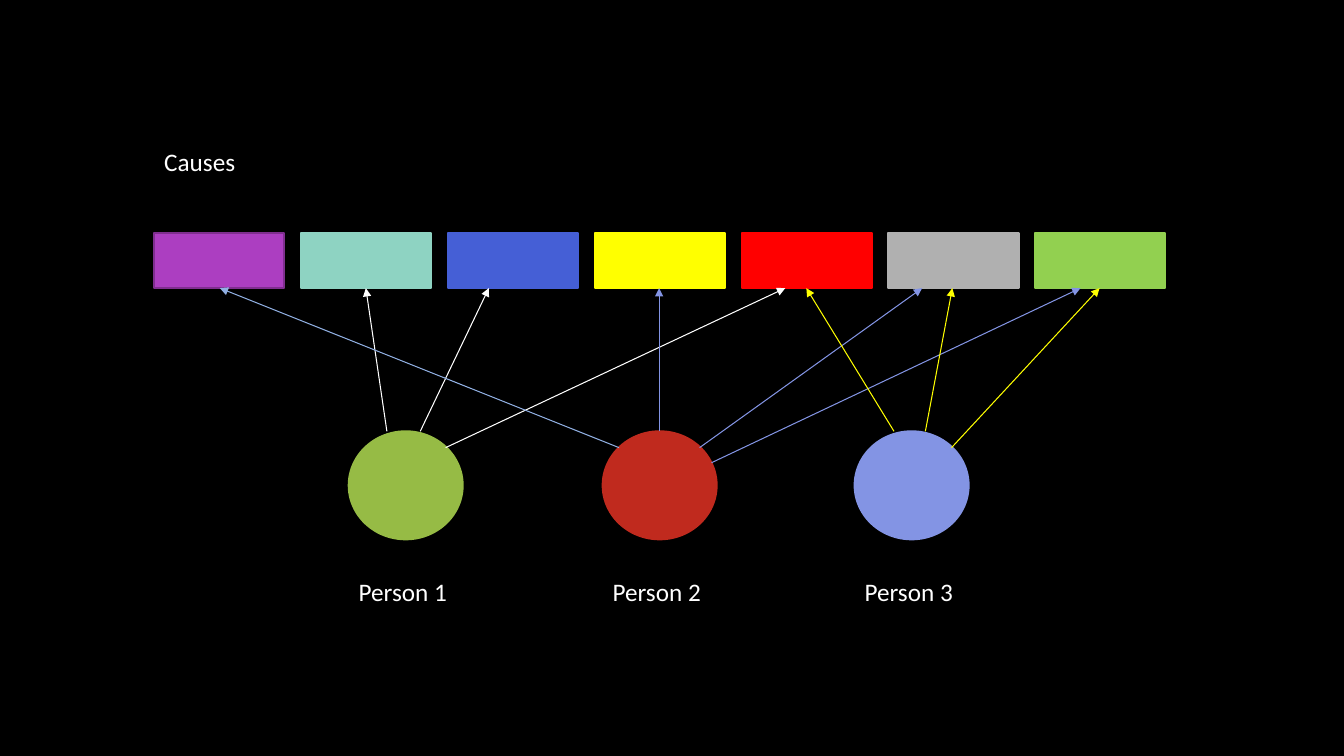
from dataclasses import dataclass

from lxml import etree
from pptx import Presentation
from pptx import util as u
from pptx.dml.color import RGBColor
from pptx.enum import shapes, text
from pptx.oxml.ns import qn
from pptx.shapes.autoshape import Shape
from pptx.slide import Slide

COLORS = {
    "black": "000000",
    "white": "FFFFFF",
    "purple": "AC3EC1",
    "dark purple": "7F2E8F",
    "mint": "8ED3C2",
    "blue": "455FD6",
    "yellow": "FFFF00",
    "red": "FF0000",
    "gray": "B0B0B0",
    "lime": "92D050",
    "olive": "96BB45",
    "brick": "C02A1E",
    "periwinkle": "8394E4",
    "sky": "91B0E3",
}

CAUSE_LEFT, CAUSE_TOP, CAUSE_PITCH = 3.89, 5.87, 3.7
CAUSE_WIDTH, CAUSE_HEIGHT = 3.28, 1.4
CAUSE_BOTTOM = 7.26
PERSON_TOP, PERSON_WIDTH, PERSON_HEIGHT = 10.87, 2.87, 2.72
LABEL_HEIGHT = 1.02


@dataclass
class Arrow:
    start_x: float
    start_y: float
    end_x: float
    color: str


@dataclass
class Person:
    name: str
    left: float
    color: str
    wrap: bool
    arrows: list[Arrow]


CAUSES = ["purple", "mint", "blue", "yellow", "red", "gray", "lime"]

PEOPLE = [
    Person("Person 1", 8.79, "olive", True, [
        Arrow(9.75, 10.87, 9.22, "white"),
        Arrow(11.23, 11.28, 19.79, "white"),
        Arrow(10.59, 10.87, 12.32, "white"),
    ]),
    Person("Person 2", 15.19, "brick", False, [
        Arrow(15.6, 11.28, 5.54, "sky"),
        Arrow(16.61, 10.87, 16.61, "periwinkle"),
        Arrow(17.93, 11.66, 27.23, "periwinkle"),
        Arrow(17.63, 11.28, 23.24, "periwinkle"),
    ]),
    Person("Person 3", 21.54, "periwinkle", False, [
        Arrow(22.53, 10.87, 20.32, "yellow"),
        Arrow(23.32, 10.87, 24, "yellow"),
        Arrow(23.98, 11.28, 27.71, "yellow"),
    ]),
]


def rgb(name: str) -> RGBColor:
    return RGBColor.from_string(COLORS[name])


def add_block(page: Slide, kind: shapes.MSO_SHAPE, left: float, top: float,
              width: float, height: float, fill: str, outline: str) -> Shape:
    block = page.shapes.add_shape(kind, u.Cm(left), u.Cm(top), u.Cm(width), u.Cm(height))
    block.shadow.inherit = False
    block.fill.solid()
    block.fill.fore_color.rgb = rgb(fill)
    block.line.color.rgb = rgb(outline)
    block.line.width = u.Pt(1.5)
    return block


def add_label(page: Slide, words: str, left: float, top: float,
              width: float, wrap: bool) -> None:
    box = page.shapes.add_textbox(u.Cm(left), u.Cm(top), u.Cm(width), u.Cm(LABEL_HEIGHT))
    frame = box.text_frame
    frame.word_wrap = wrap
    frame.auto_size = text.MSO_AUTO_SIZE.SHAPE_TO_FIT_TEXT
    para = frame.paragraphs[0]
    para.text = words
    para.font.name = "Calibri"
    para.font.size = u.Pt(18)
    para.font.color.rgb = rgb("white")


def add_arrow(page: Slide, arrow: Arrow) -> None:
    connector = page.shapes.add_connector(
        shapes.MSO_CONNECTOR.STRAIGHT, u.Cm(arrow.start_x), u.Cm(arrow.start_y),
        u.Cm(arrow.end_x), u.Cm(CAUSE_BOTTOM))
    connector.line.color.rgb = rgb(arrow.color)
    connector.line.width = u.Pt(0.75)
    etree.SubElement(connector.line._get_or_add_ln(), qn("a:tailEnd"), type="triangle")
    etree.SubElement(connector._element.spPr, qn("a:effectLst"))


def main() -> None:
    deck = Presentation()
    deck.slide_width, deck.slide_height = u.Cm(33.87), u.Cm(19.05)
    page = deck.slides.add_slide(deck.slide_layouts[6])
    page.background.fill.solid()
    page.background.fill.fore_color.rgb = rgb("black")

    for index, color in enumerate(CAUSES):
        outline = "dark purple" if color == "purple" else color
        add_block(page, shapes.MSO_SHAPE.RECTANGLE, CAUSE_LEFT + index * CAUSE_PITCH,
                  CAUSE_TOP, CAUSE_WIDTH, CAUSE_HEIGHT, color, outline)
    add_label(page, "Causes", CAUSE_LEFT, 3.56, 2.44, True)

    for person in PEOPLE:
        add_block(page, shapes.MSO_SHAPE.OVAL, person.left, PERSON_TOP,
                  PERSON_WIDTH, PERSON_HEIGHT, person.color, person.color)
        add_label(page, person.name, person.left, 14.4, PERSON_WIDTH, person.wrap)
    for person in PEOPLE:
        for arrow in person.arrows:
            add_arrow(page, arrow)

    deck.save("out.pptx")


if __name__ == "__main__":
    main()
